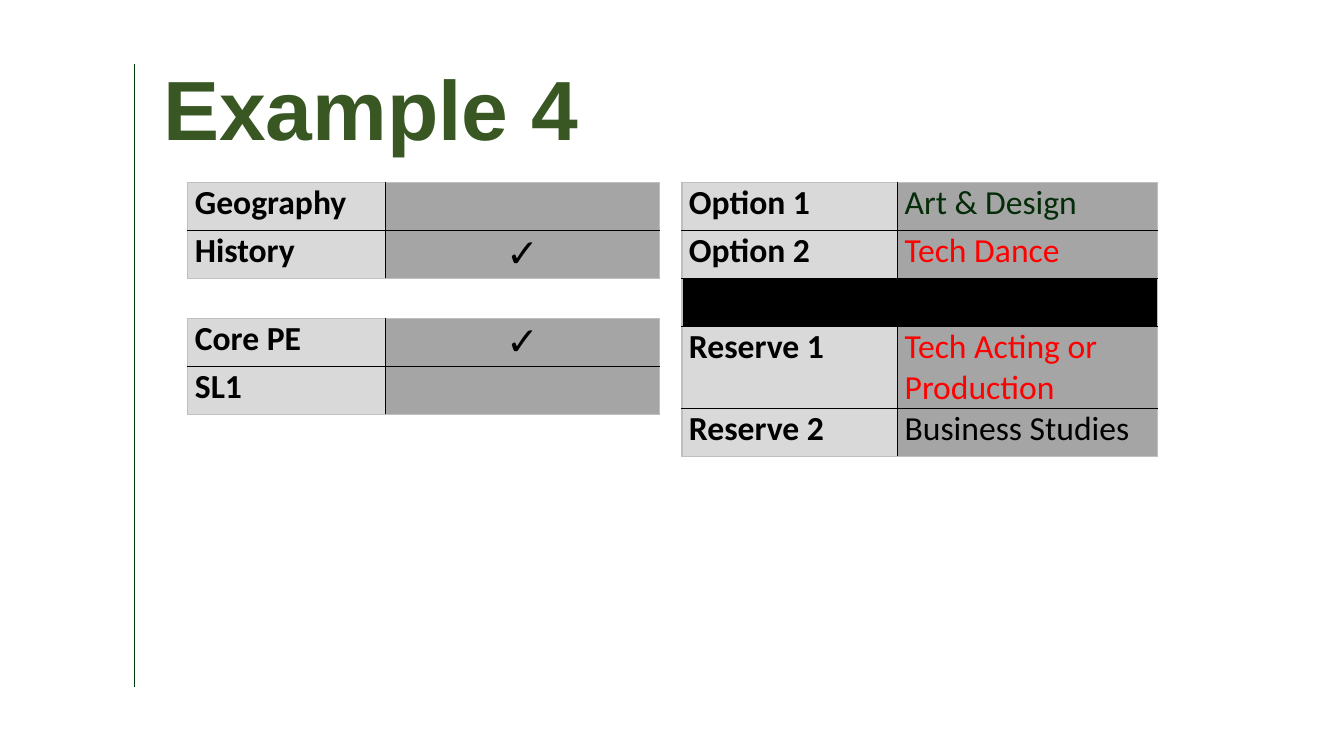
from dataclasses import dataclass

from lxml.etree import SubElement
from pptx import Presentation
from pptx.dml.color import RGBColor
from pptx.enum.shapes import MSO_CONNECTOR as Link
from pptx.enum.text import MSO_ANCHOR as Anchor, PP_ALIGN as Align
from pptx.oxml.ns import qn
from pptx.slide import Slide
from pptx.table import _Cell as Cell
from pptx.util import Inches, Pt

WIDE, HIGH = Inches(13.33), Inches(7.5)
BLACK, LIGHT, GREY, EDGE, RED = "000000", "D9D9D9", "A5A5A5", "BFBFBF", "FF0000"
ROW, TALL = 6.35, 10.85
TICK = "✓"


@dataclass
class Entry:
    """One row: a bold label and its choice."""
    label: str = ""
    choice: str = ""
    ink: str = BLACK
    high: float = ROW


@dataclass
class Grid:
    """A two-column table placed by percent of the slide."""
    left: float
    top: float
    cols: tuple[float, float]
    rows: list[Entry]


GRIDS = [
    Grid(13.98, 24.13, (14.7, 20.4), [Entry("Geography"), Entry("History", TICK)]),
    Grid(13.98, 42.13, (14.7, 20.4), [Entry("Core PE", TICK), Entry("SL1")]),
    Grid(50.74, 24.13, (16.05, 19.35), [
        Entry("Option 1", "Art & Design", "042C08"),
        Entry("Option 2", "Tech Dance", RED),
        Entry(),
        Entry("Reserve 1", "Tech Acting or Production", RED, TALL),
        Entry("Reserve 2", "Business Studies"),
    ]),
]


def across(share: float) -> int:
    """Turn a percent of the slide width into a length."""
    return int(WIDE * share / 100)


def down(share: float) -> int:
    """Turn a percent of the slide height into a length."""
    return int(HIGH * share / 100)


def tint(code: str) -> RGBColor:
    """Turn a hex string into a colour."""
    return RGBColor.from_string(code)


def border(cell: Cell, outer: dict[str, bool]) -> None:
    """Rule the cell: grey on the table's rim, black inside."""
    props = cell._tc.get_or_add_tcPr()
    for side, rim in outer.items():
        line = SubElement(props, qn(f"a:ln{side}"), w=str(Pt(1)))
        fill = SubElement(line, qn("a:solidFill"))
        SubElement(fill, qn("a:srgbClr"), val=EDGE if rim else BLACK)


def write(cell: Cell, text: str, ink: str, bold: bool) -> None:
    """Put styled text in a cell."""
    cell.margin_left = cell.margin_right = Inches(0.07)
    cell.margin_top = cell.margin_bottom = 0
    if not text:
        return
    cell.text_frame.text = text
    para = cell.text_frame.paragraphs[0]
    para.alignment = Align.CENTER if text == TICK else Align.LEFT
    font = para.runs[0].font
    font.name, font.bold = "Calibri", bold
    font.size = Pt(28 if text == TICK else 24)
    font.color.rgb = tint(ink)


def draw(slide: Slide, grid: Grid) -> None:
    """Add one table to the slide."""
    last = len(grid.rows) - 1
    table = slide.shapes.add_table(
        last + 1, 2, across(grid.left), down(grid.top), across(sum(grid.cols)),
        down(sum(row.high for row in grid.rows))).table
    for col, share in zip(table.columns, grid.cols):
        col.width = across(share)
    for i, row in enumerate(grid.rows):
        table.rows[i].height = down(row.high)
        parts = [(row.label, BLACK, LIGHT), (row.choice, row.ink, GREY)]
        for j, (text, ink, back) in enumerate(parts):
            cell = table.cell(i, j)
            border(cell, {"L": j == 0, "R": j == 1, "T": i == 0, "B": i == last})
            cell.fill.solid()
            cell.fill.fore_color.rgb = tint(back if row.label else BLACK)
            write(cell, text, ink, j == 0)


def head(slide: Slide, text: str) -> None:
    """Place and style the title."""
    title = slide.shapes.title
    title.left, title.top = across(11.4), down(5.33)
    title.width, title.height = across(81.77), down(19.33)
    frame = title.text_frame
    frame.text = text
    frame.word_wrap = True
    frame.vertical_anchor = Anchor.MIDDLE
    para = frame.paragraphs[0]
    para.alignment, para.line_spacing = Align.LEFT, 0.9
    font = para.runs[0].font
    font.name, font.size, font.bold = "Arial", Pt(60), True
    font.color.rgb = tint("385723")


def rule(slide: Slide) -> None:
    """Draw the thin line down the left side."""
    line = slide.shapes.add_connector(
        Link.STRAIGHT, across(10), down(8.45), across(10), down(90.93))
    line.line.width = Pt(0.5)
    line.line.color.rgb = tint("003907")
    SubElement(line._element.spPr, qn("a:effectLst"))


def main() -> None:
    """Build and save the slide."""
    deck = Presentation()
    deck.slide_width, deck.slide_height = WIDE, HIGH
    slide = deck.slides.add_slide(deck.slide_layouts[5])
    rule(slide)
    head(slide, "Example 4")
    for grid in GRIDS:
        draw(slide, grid)
    deck.save("out.pptx")


if __name__ == "__main__":
    main()
